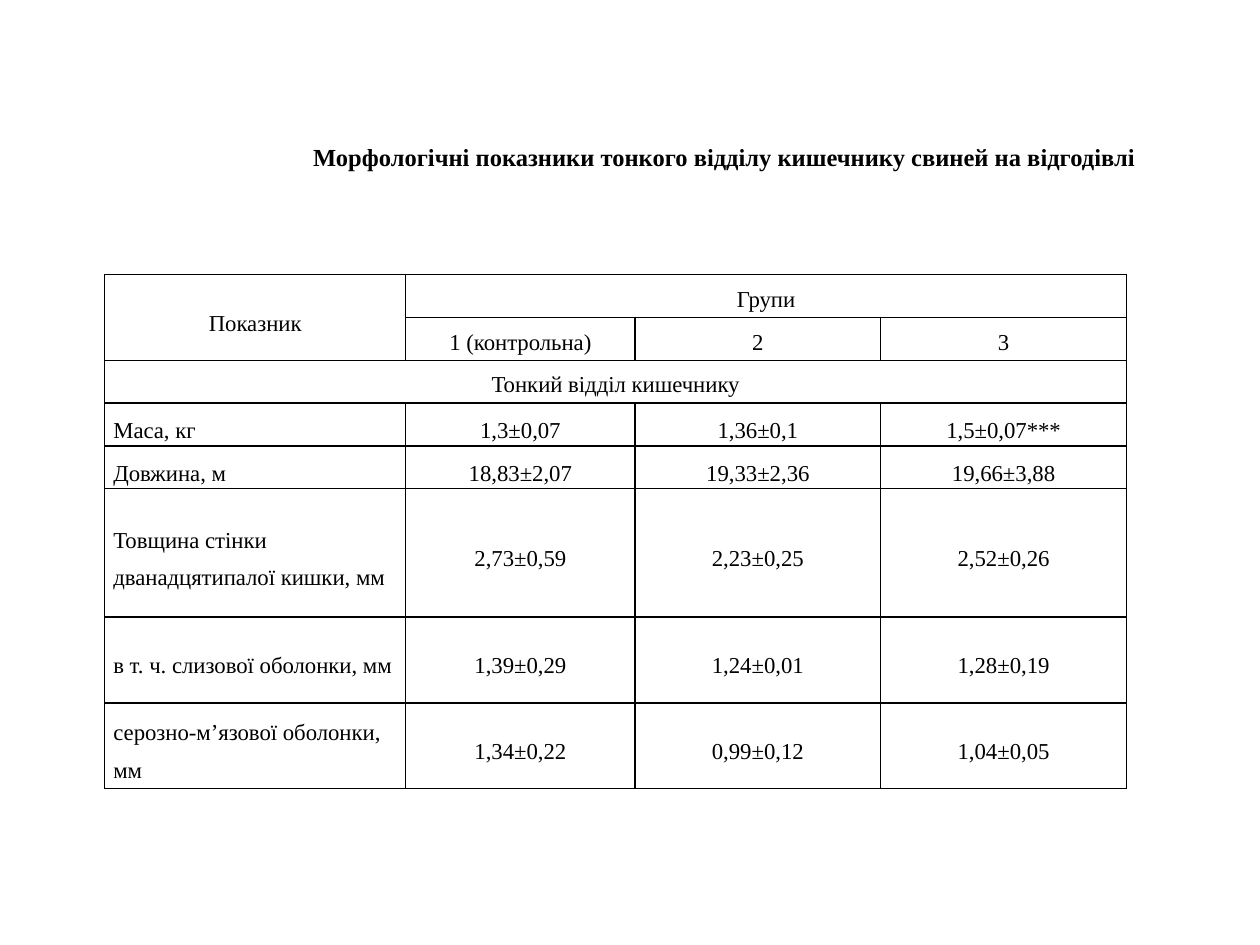
"""Build a slide with a table of small intestine measurements in pigs."""
from dataclasses import dataclass

from lxml import etree
from pptx import Presentation
from pptx.dml.color import RGBColor
from pptx.enum.text import MSO_ANCHOR, PP_ALIGN
from pptx.oxml.ns import qn
from pptx.slide import Slide
from pptx.table import Table, _Cell
from pptx.text.text import TextFrame
from pptx.util import Inches, Pt

LEFT, CENTER = PP_ALIGN.LEFT, PP_ALIGN.CENTER
TOP, MIDDLE = MSO_ANCHOR.TOP, MSO_ANCHOR.MIDDLE


@dataclass(frozen=True)
class Theme:
    font: str = "Times New Roman"
    ink: str = "000000"
    title: float = 14
    body: float = 13
    line: float = 1
    lead: float = 1.5
    pad: float = 0.07


@dataclass(frozen=True)
class Row:
    label: str
    values: tuple[str, str, str]
    height: float = 0.34


@dataclass(frozen=True)
class Head:
    text: str
    row: int
    col: int
    rows: int = 1
    cols: int = 1
    anchor: MSO_ANCHOR = TOP


THEME = Theme()
TITLE = "Морфологічні показники тонкого відділу кишечнику свиней на відгодівлі"
WIDTHS = (2.39, 1.82, 1.95, 1.95)
HEADS = (
    Head("Показник", 0, 0, rows=2, anchor=MIDDLE),
    Head("Групи", 0, 1, cols=3),
    Head("1 (контрольна)", 1, 1),
    Head("2", 1, 2),
    Head("3", 1, 3),
    Head("Тонкий відділ кишечнику", 2, 0, cols=4),
)
ROWS = (
    Row("Маса, кг", ("1,3±0,07", "1,36±0,1", "1,5±0,07***")),
    Row("Довжина, м", ("18,83±2,07", "19,33±2,36", "19,66±3,88")),
    Row("Товщина стінки дванадцятипалої кишки, мм",
        ("2,73±0,59", "2,23±0,25", "2,52±0,26"), 1.02),
    Row("в т. ч. слизової оболонки, мм",
        ("1,39±0,29", "1,24±0,01", "1,28±0,19"), 0.68),
    Row("серозно-м’язової оболонки, мм",
        ("1,34±0,22", "0,99±0,12", "1,04±0,05"), 0.68),
)
HEIGHTS = (0.34,) * 3 + tuple(row.height for row in ROWS)


def write(frame: TextFrame, text: str, *, size: float = THEME.body,
          bold: bool = False, align: PP_ALIGN = CENTER,
          lead: float = THEME.lead) -> None:
    """Write one paragraph in the theme font."""
    para = frame.paragraphs[0]
    para.alignment = align
    para.line_spacing = lead
    run = para.add_run()
    run.text = text
    font = run.font
    font.name, font.size, font.bold = THEME.font, Pt(size), bold
    font.color.rgb = RGBColor.from_string(THEME.ink)


def style(cell: _Cell) -> None:
    """Give a cell its borders, margins and empty fill."""
    props = cell._tc.get_or_add_tcPr()
    for side in "LRTB":
        line = etree.SubElement(props, qn(f"a:ln{side}"), w=str(Pt(THEME.line)))
        fill = etree.SubElement(line, qn("a:solidFill"))
        etree.SubElement(fill, qn("a:srgbClr"), val=THEME.ink)
    cell.fill.background()
    cell.margin_left = cell.margin_right = Inches(THEME.pad)
    cell.margin_top = cell.margin_bottom = 0


def draw_heads(table: Table) -> None:
    """Merge and fill the heading cells."""
    for head in HEADS:
        cell = table.cell(head.row, head.col)
        if head.rows * head.cols > 1:
            cell.merge(table.cell(head.row + head.rows - 1,
                                  head.col + head.cols - 1))
        cell.vertical_anchor = head.anchor
        write(cell.text_frame, head.text)


def draw_rows(table: Table) -> None:
    """Fill the measurement rows below the headings."""
    start = len(HEIGHTS) - len(ROWS)
    for r, row in enumerate(ROWS, start):
        for c, text in enumerate((row.label, *row.values)):
            cell = table.cell(r, c)
            cell.vertical_anchor = MIDDLE
            write(cell.text_frame, text, align=CENTER if c else LEFT)


def draw_table(slide: Slide) -> None:
    """Add the table of measurements."""
    table = slide.shapes.add_table(
        len(HEIGHTS), len(WIDTHS), Inches(0.83), Inches(2.18),
        Inches(sum(WIDTHS)), Inches(sum(HEIGHTS))).table
    table.first_row = table.horz_banding = False
    for col, width in zip(table.columns, WIDTHS):
        col.width = Inches(width)
    for row, height in zip(table.rows, HEIGHTS):
        row.height = Inches(height)
    for cell in table.iter_cells():
        style(cell)
    draw_heads(table)
    draw_rows(table)


def draw_title(slide: Slide) -> None:
    """Add the bold title line."""
    box = slide.shapes.add_textbox(
        Inches(0.75), Inches(0.99), Inches(10), Inches(0.5))
    frame = box.text_frame
    frame.word_wrap = False
    frame.vertical_anchor = MIDDLE
    write(frame, TITLE, size=THEME.title, bold=True, lead=1.0)


def main() -> None:
    """Build and save the slide."""
    deck = Presentation()
    deck.slide_width, deck.slide_height = Inches(10), Inches(7.5)
    slide = deck.slides.add_slide(deck.slide_layouts[6])
    draw_table(slide)
    draw_title(slide)
    deck.save("out.pptx")


if __name__ == "__main__":
    main()
